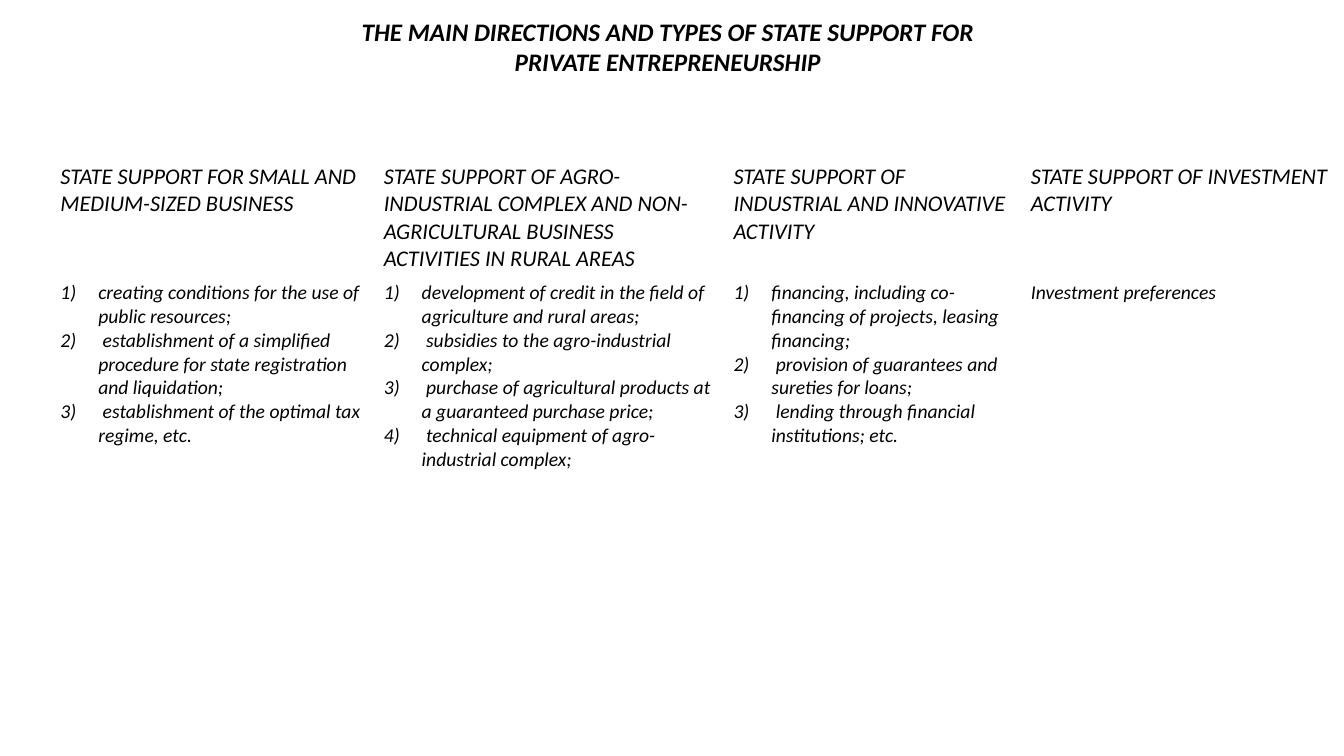
import dataclasses

import pptx
import pptx.dml.color
import pptx.enum.text
import pptx.oxml
import pptx.oxml.ns
import pptx.slide
import pptx.table
import pptx.text.text
import pptx.util

Pt = pptx.util.Pt


@dataclasses.dataclass(frozen=True)
class Theme:
    font: str = "Calibri"
    ink: pptx.dml.color.RGBColor = pptx.dml.color.RGBColor(0, 0, 0)
    title: int = 18
    head: int = 16
    body: int = 14
    indent: int = 27


@dataclasses.dataclass(frozen=True)
class Column:
    width: float
    head: str
    items: tuple[str, ...]


THEME = Theme()
TITLE = "THE MAIN DIRECTIONS AND TYPES OF STATE SUPPORT FOR PRIVATE ENTREPRENEURSHIP"
COLUMNS = (
    Column(231, "STATE SUPPORT FOR SMALL AND MEDIUM-SIZED BUSINESS", (
        "creating conditions for the use of public resources;",
        " establishment of a simplified procedure for state registration and liquidation;",
        " establishment of the optimal tax regime, etc.",
    )),
    Column(249.8, "STATE SUPPORT OF AGRO-INDUSTRIAL COMPLEX AND "
           "NON-AGRICULTURAL BUSINESS ACTIVITIES IN RURAL AREAS", (
               "development of credit in the field of agriculture and rural areas;",
               " subsidies to the agro-industrial complex;",
               " purchase of agricultural products at a guaranteed purchase price;",
               " technical equipment of agro-industrial complex;",
           )),
    Column(212.4, "STATE SUPPORT OF INDUSTRIAL AND INNOVATIVE ACTIVITY", (
        "financing, including co-financing of projects, leasing financing;",
        " provision of guarantees and sureties for loans;",
        " lending through financial institutions; etc.",
    )),
    Column(231, "STATE SUPPORT OF INVESTMENT ACTIVITY", ("Investment preferences",)),
)
ROWS = (84, 141)


def style(frame: pptx.text.text.TextFrame, size: int, bold: bool = False) -> None:
    for para in frame.paragraphs:
        for run in para.runs:
            font = run.font
            font.name, font.size = THEME.font, Pt(size)
            font.bold, font.italic = bold, True
            font.color.rgb = THEME.ink


def number(frame: pptx.text.text.TextFrame) -> None:
    for para in frame.paragraphs:
        props = para._p.get_or_add_pPr()
        props.set("marL", str(Pt(THEME.indent)))
        props.set("indent", str(-Pt(THEME.indent)))
        space = pptx.oxml.ns.nsdecls("a")
        props.append(pptx.oxml.parse_xml(f'<a:buFont {space} typeface="+mj-lt"/>'))
        props.append(pptx.oxml.parse_xml(f'<a:buAutoNum {space} type="arabicParenR"/>'))


def fill_cell(cell: pptx.table._Cell, items: tuple[str, ...], size: int) -> None:
    cell.fill.background()
    cell.text_frame.text = "\n".join(items)
    style(cell.text_frame, size)
    if len(items) > 1:
        number(cell.text_frame)


def add_title(slide: pptx.slide.Slide) -> None:
    title = slide.shapes.title
    title.left, title.top, title.width, title.height = Pt(237), Pt(8), Pt(480), Pt(51)
    frame = title.text_frame
    frame.text = TITLE
    frame.word_wrap = True
    frame.auto_size = pptx.enum.text.MSO_AUTO_SIZE.SHAPE_TO_FIT_TEXT
    frame.vertical_anchor = pptx.enum.text.MSO_ANCHOR.TOP
    frame.paragraphs[0].alignment = pptx.enum.text.PP_ALIGN.CENTER
    style(frame, THEME.title, bold=True)


def add_grid(slide: pptx.slide.Slide) -> None:
    width = sum(col.width for col in COLUMNS)
    table = slide.shapes.add_table(
        len(ROWS), len(COLUMNS), Pt(36), Pt(113), Pt(width), Pt(sum(ROWS))).table
    table.first_row = table.horz_banding = False
    for row, height in zip(table.rows, ROWS):
        row.height = Pt(height)
    for index, col in enumerate(COLUMNS):
        table.columns[index].width = Pt(col.width)
        fill_cell(table.cell(0, index), (col.head,), THEME.head)
        fill_cell(table.cell(1, index), col.items, THEME.body)


def main() -> None:
    # Page
    deck = pptx.Presentation()
    deck.slide_width, deck.slide_height = Pt(960), Pt(540)
    slide = deck.slides.add_slide(deck.slide_layouts[5])
    # Title and table of support types
    add_title(slide)
    add_grid(slide)
    deck.save("out.pptx")


if __name__ == "__main__":
    main()
